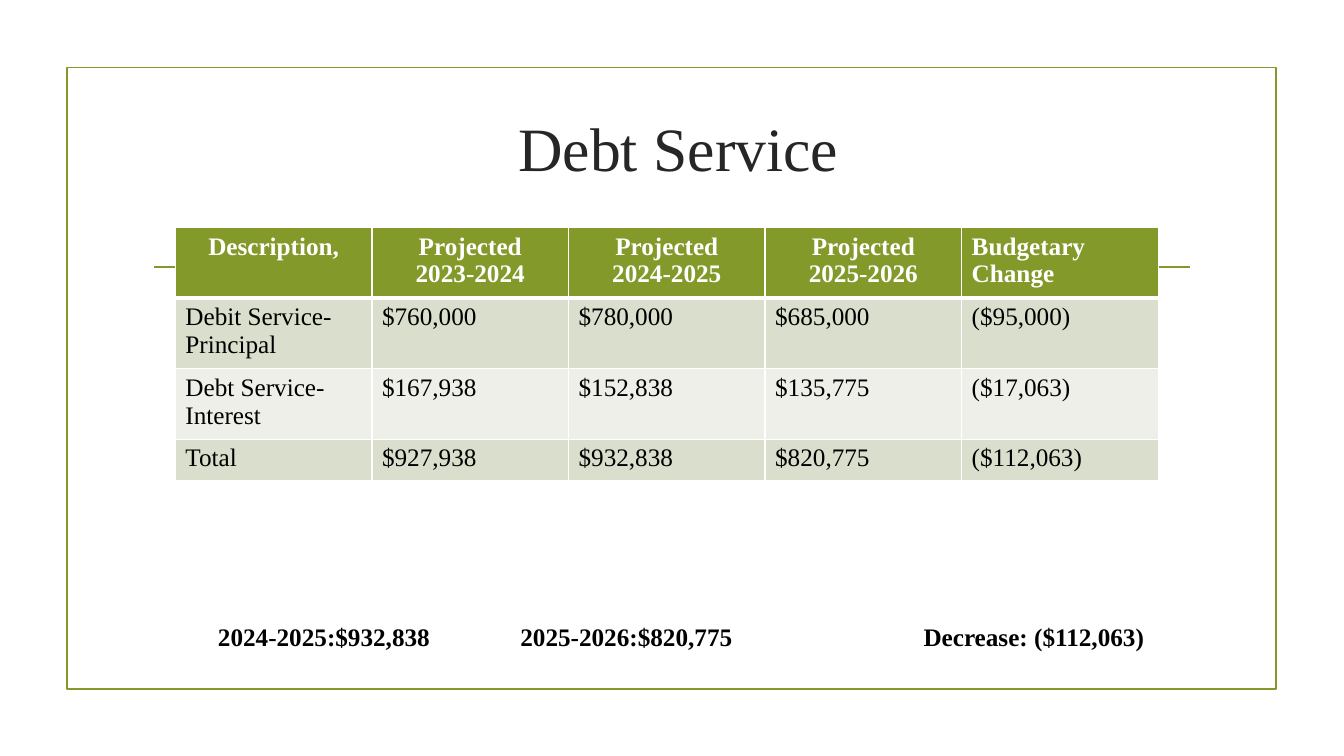
from dataclasses import dataclass

from lxml import etree
from pptx import Presentation
from pptx import util as u
from pptx.dml.color import RGBColor
from pptx.enum import shapes, text
from pptx.oxml import ns

Pt = u.Pt
MID = text.PP_ALIGN.CENTER
LEFT = text.PP_ALIGN.LEFT


@dataclass(frozen=True)
class Theme:
    face: str = "Times New Roman"
    green: str = "83992A"
    ink: str = "262626"
    black: str = "000000"
    white: str = "FFFFFF"
    bands: tuple = ("D9DECD", "EDEFE8")
    head: int = 44
    body: int = 18
    rule: float = 1.25


T = Theme()

ROWS = [
    ["Description,", "Projected\n2023-2024", "Projected\n2024-2025",
     "Projected\n2025-2026", "Budgetary Change"],
    ["Debit Service-Principal", "$760,000", "$780,000", "$685,000", "($95,000)"],
    ["Debt Service-Interest", "$167,938", "$152,838", "$135,775", "($17,063)"],
    ["Total", "$927,938", "$932,838", "$820,775", "($112,063)"],
]
TALL = [47.2, 47.2, 47.2, 29.2]
SUMS = ["2024-2025:$932,838", "2025-2026:$820,775", "Decrease: ($112,063)"]


def rgb(code):
    return RGBColor.from_string(code)


def style(para, size, color, bold=False, align=LEFT):
    para.alignment = align
    font = para.font
    font.name, font.size, font.bold = T.face, Pt(size), bold
    font.color.rgb = rgb(color)


def add_box(slide, box):
    frame = slide.shapes.add_textbox(*map(Pt, box)).text_frame
    frame.word_wrap = True
    return frame


# Green frame and the rule behind the table
def add_frame(slide, box, inset, drop):
    left, top, width, height = box
    rect = slide.shapes.add_shape(shapes.MSO_SHAPE.RECTANGLE, *map(Pt, box))
    rect.shadow.inherit = False
    rect.fill.background()
    y = Pt(top + drop)
    rule = slide.shapes.add_connector(
        shapes.MSO_CONNECTOR.STRAIGHT,
        Pt(left + inset), y, Pt(left + width - inset + 1), y)
    etree.SubElement(rule._element.spPr, ns.qn("a:effectLst"))
    for part in (rect, rule):
        part.line.color.rgb = rgb(T.green)
        part.line.width = Pt(T.rule)


# Title
def add_title(slide, box):
    frame = add_box(slide, box)
    frame.vertical_anchor = text.MSO_ANCHOR.MIDDLE
    frame.text = "Debt Service"
    style(frame.paragraphs[0], T.head, T.ink, align=MID)


# White cell borders, heavier under the header
def add_edges(cell, head):
    props = cell._tc.get_or_add_tcPr()
    for spot, side in enumerate("LRTB"):
        wide = 3 if head and side == "B" else 1
        edge = etree.Element(ns.qn(f"a:ln{side}"), w=str(Pt(wide)))
        fill = etree.SubElement(edge, ns.qn("a:solidFill"))
        etree.SubElement(fill, ns.qn("a:srgbClr"), val=T.white)
        props.insert(spot, edge)


# Debt table
def add_debt(slide, box):
    count = len(ROWS[0])
    table = slide.shapes.add_table(len(ROWS), count, *map(Pt, box)).table
    for col in table.columns:
        col.width = Pt(box[2] / count)
    for r, row in enumerate(ROWS):
        head = r == 0
        table.rows[r].height = Pt(TALL[r])
        for c, words in enumerate(row):
            cell = table.cell(r, c)
            cell.text = words
            cell.fill.solid()
            cell.fill.fore_color.rgb = rgb(T.green if head else T.bands[(r - 1) % 2])
            add_edges(cell, head)
            align = MID if head and c < count - 1 else LEFT
            for para in cell.text_frame.paragraphs:
                style(para, T.body, T.white if head else T.black, head, align)


# Totals line, spread by tab stops
def add_sums(slide, box, inset, stops):
    frame = add_box(slide, box)
    frame.margin_left = Pt(inset)
    frame.text = "\t".join(SUMS)
    para = frame.paragraphs[0]
    tabs = etree.SubElement(para._p.get_or_add_pPr(), ns.qn("a:tabLst"))
    for stop in stops:
        etree.SubElement(tabs, ns.qn("a:tab"), pos=str(Pt(stop)), algn="l")
    style(para, T.body, T.black, True)


def main():
    deck = Presentation()
    deck.slide_width, deck.slide_height = Pt(960), Pt(540)
    slide = deck.slides.add_slide(deck.slide_layouts[6])
    add_frame(slide, (47.7, 48.2, 864, 443.8), 62.5, 142.6)
    add_title(slide, (106.6, 53.3, 756, 103))
    add_debt(slide, (125.3, 162.5, 702, sum(TALL)))
    add_sums(slide, (130.3, 440.6, 712, 29), 25.4, (216, 504))
    deck.save("out.pptx")


if __name__ == "__main__":
    main()
